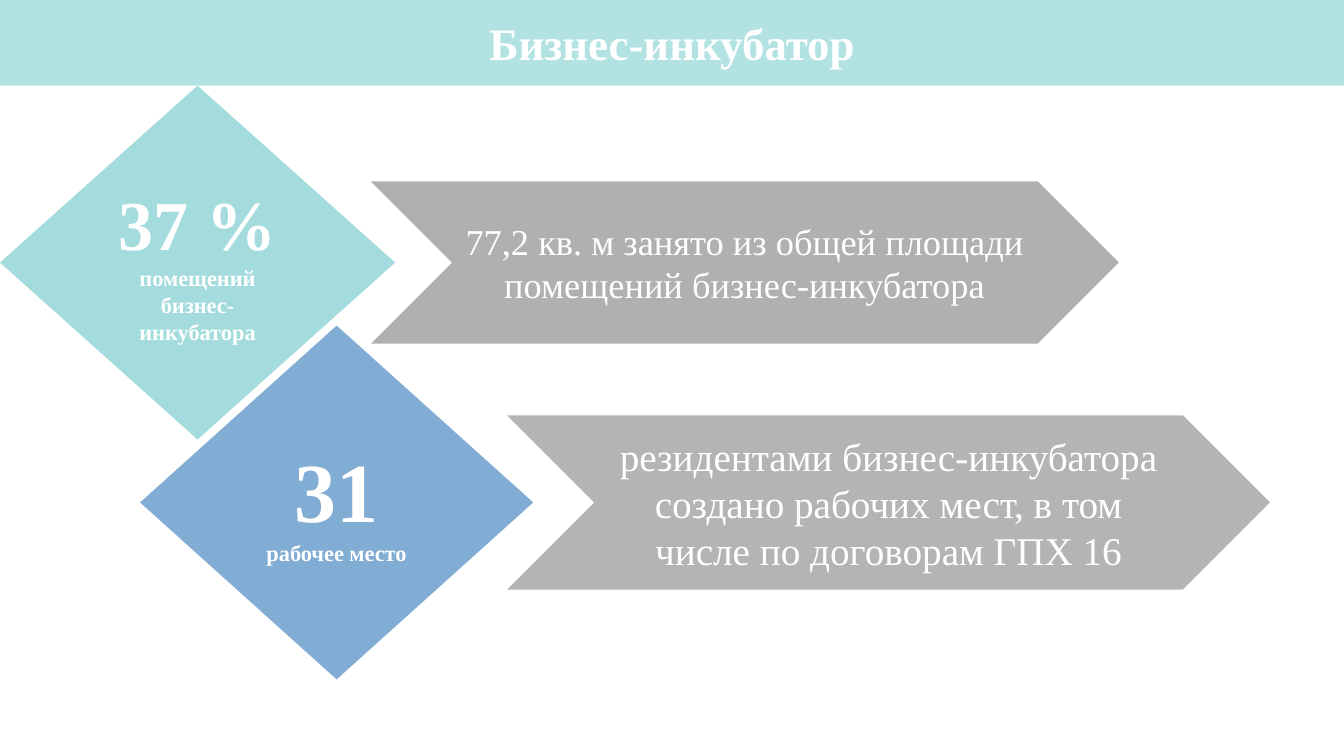
from pptx import Presentation
from pptx.dml.color import RGBColor
from pptx.enum.shapes import MSO_SHAPE
from pptx.enum.text import MSO_ANCHOR, PP_ALIGN
from pptx.oxml.ns import qn
from pptx.util import Pt
from lxml import etree

RECT, DIAMOND, ARROW = MSO_SHAPE.RECTANGLE, MSO_SHAPE.DIAMOND, MSO_SHAPE.CHEVRON
MIDDLE, CENTER = MSO_ANCHOR.MIDDLE, PP_ALIGN.CENTER
TEAL = RGBColor(0x68, 0xC6, 0xC8)
BLUE = RGBColor(0x2E, 0x75, 0xB6)
GRAY = RGBColor(0x80, 0x80, 0x80)
WHITE = RGBColor(0xFF, 0xFF, 0xFF)
FONT = "Times New Roman"
WIDTH, HEIGHT, BAND = 960, 540, 61.2

deck = Presentation()
deck.slide_width, deck.slide_height = Pt(WIDTH), Pt(HEIGHT)
slide = deck.slides.add_slide(deck.slide_layouts[6])


def add_run(para, text, size, bold=False):
    run = para.add_run()
    run.text = text
    font = run.font
    font.name, font.size, font.bold = FONT, Pt(size), bold
    font.color.rgb = WHITE


def add_box(kind, left, mid, width, height, color, alpha):
    """Add a see-through shape centred on height mid; return its paragraph."""
    box = slide.shapes.add_shape(
        kind, Pt(left), Pt(mid - height / 2), Pt(width), Pt(height))
    box.shadow.inherit = False
    box.line.fill.background()
    box.fill.solid()
    box.fill.fore_color.rgb = color
    tint = box.element.xpath("p:spPr/a:solidFill/a:srgbClr")[0]
    etree.SubElement(tint, qn("a:alpha"), val=str(alpha * 1000))
    frame = box.text_frame
    frame.word_wrap = True
    frame.vertical_anchor = MIDDLE
    para = frame.paragraphs[0]
    para.alignment = CENTER
    return para


# Each row: a diamond with a figure, and an arrow on the same axis
rows = [
    dict(mid=187.56, gem=(0, 282.24), color=TEAL,
         figure="37 %", size=50, label=" помещений бизнес-инкубатора",
         arrow=(264.96, 534.24, 115.92), alpha=62, note_size=26,
         note="77,2 кв. м занято из общей площади помещений бизнес-инкубатора"),
    dict(mid=358.92, gem=(100.08, 280.8), color=BLUE,
         figure="31 ", size=60, label="рабочее место",
         arrow=(362.16, 545.04, 124.56), alpha=59, note_size=28,
         note="резидентами бизнес-инкубатора создано рабочих мест, "
              "в том числе по договорам ГПХ 16"),
]
for row in rows:
    left, width = row["gem"]
    para = add_box(DIAMOND, left, row["mid"], width, 252.72, row["color"], 60)
    add_run(para, row["figure"], row["size"], bold=True)
    add_run(para, row["label"], 16, bold=True)

    left, width, height = row["arrow"]
    para = add_box(ARROW, left, row["mid"], width, height, GRAY, row["alpha"])
    add_run(para, row["note"], row["note_size"])

# Title band
para = add_box(RECT, 0, BAND / 2, WIDTH, BAND, TEAL, 50)
add_run(para, "Бизнес-инкубатор", 32, bold=True)

deck.save("out.pptx")
